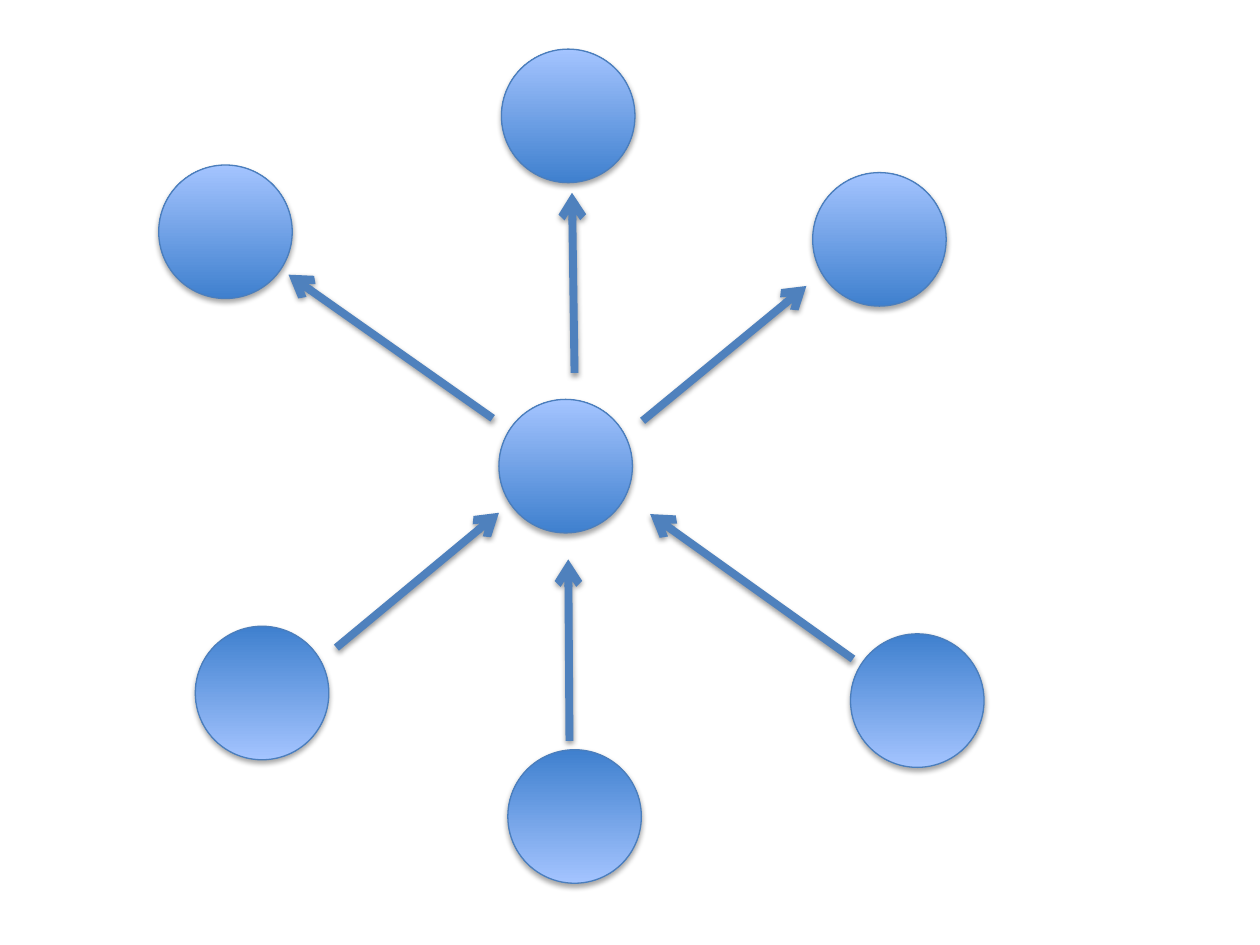
from typing import NamedTuple

from pptx import Presentation
from pptx import util as u
from pptx.dml.color import RGBColor
from pptx.enum import shapes
from pptx.oxml import parse_xml
from pptx.oxml.ns import nsdecls, qn

SIZE = 1.06  # diameter of every node
DARK, LIGHT, EDGE, BLUE = "3F80CE", "A4C4FF", "4B7EBC", "4F81BD"


class Node(NamedTuple):
    left: float
    top: float
    turn: int = 0


class Arrow(NamedTuple):
    x1: float
    y1: float
    x2: float
    y2: float


NODES = [
    Node(3.96, 3.17),  # hub
    Node(1.26, 1.31), Node(3.98, 0.39), Node(6.45, 1.37),  # targets
    Node(1.55, 4.97, 180), Node(4.03, 5.95, 180), Node(6.75, 5.03, 180),  # sources
]
ARROWS = [
    Arrow(3.91, 3.32, 2.29, 2.18), Arrow(4.56, 2.96, 4.54, 1.53),
    Arrow(5.1, 3.34, 6.4, 2.27),  # out of the hub
    Arrow(2.67, 5.14, 3.96, 4.07), Arrow(4.52, 5.88, 4.51, 4.44),
    Arrow(6.77, 5.23, 5.16, 4.08),  # into the hub
]


def color(code: str) -> RGBColor:
    return RGBColor.from_string(code)


def add_shadow(item, dist: float, alpha: int) -> None:
    """Drop a soft black shadow straight down."""
    item._element.spPr.append(parse_xml(
        f'<a:effectLst {nsdecls("a")}><a:outerShdw blurRad="{u.Pt(3.1)}" '
        f'dist="{u.Pt(dist)}" dir="5400000" rotWithShape="0">'
        f'<a:srgbClr val="000000"><a:alpha val="{alpha * 1000}"/></a:srgbClr>'
        '</a:outerShdw></a:effectLst>'))


def set_line(item, code: str, width: float) -> None:
    item.line.color.rgb = color(code)
    item.line.width = u.Pt(width)


def add_node(slide, node: Node) -> None:
    disc = slide.shapes.add_shape(
        shapes.MSO_SHAPE.OVAL, u.Inches(node.left), u.Inches(node.top),
        u.Inches(SIZE), u.Inches(SIZE))
    disc.rotation = node.turn
    disc.fill.gradient()
    disc.fill.gradient_angle = 90
    for stop, code in zip(disc.fill.gradient_stops, (DARK, LIGHT)):
        stop.color.rgb = color(code)
    set_line(disc, EDGE, 0.75)
    add_shadow(disc, 1.8, 35)


def add_arrow(slide, arrow: Arrow) -> None:
    line = slide.shapes.add_connector(
        shapes.MSO_CONNECTOR.STRAIGHT, *(u.Inches(v) for v in arrow))
    set_line(line, BLUE, 4.5)
    line._element.spPr.find(qn("a:ln")).append(
        parse_xml(f'<a:tailEnd {nsdecls("a")} type="arrow"/>'))
    add_shadow(line, 1.6, 38)


def main() -> None:
    deck = Presentation()
    deck.slide_width, deck.slide_height = u.Inches(10), u.Inches(7.5)
    slide = deck.slides.add_slide(deck.slide_layouts[6])  # blank
    for node in NODES:
        add_node(slide, node)
    for arrow in ARROWS:
        add_arrow(slide, arrow)
    deck.save("out.pptx")


if __name__ == "__main__":
    main()
